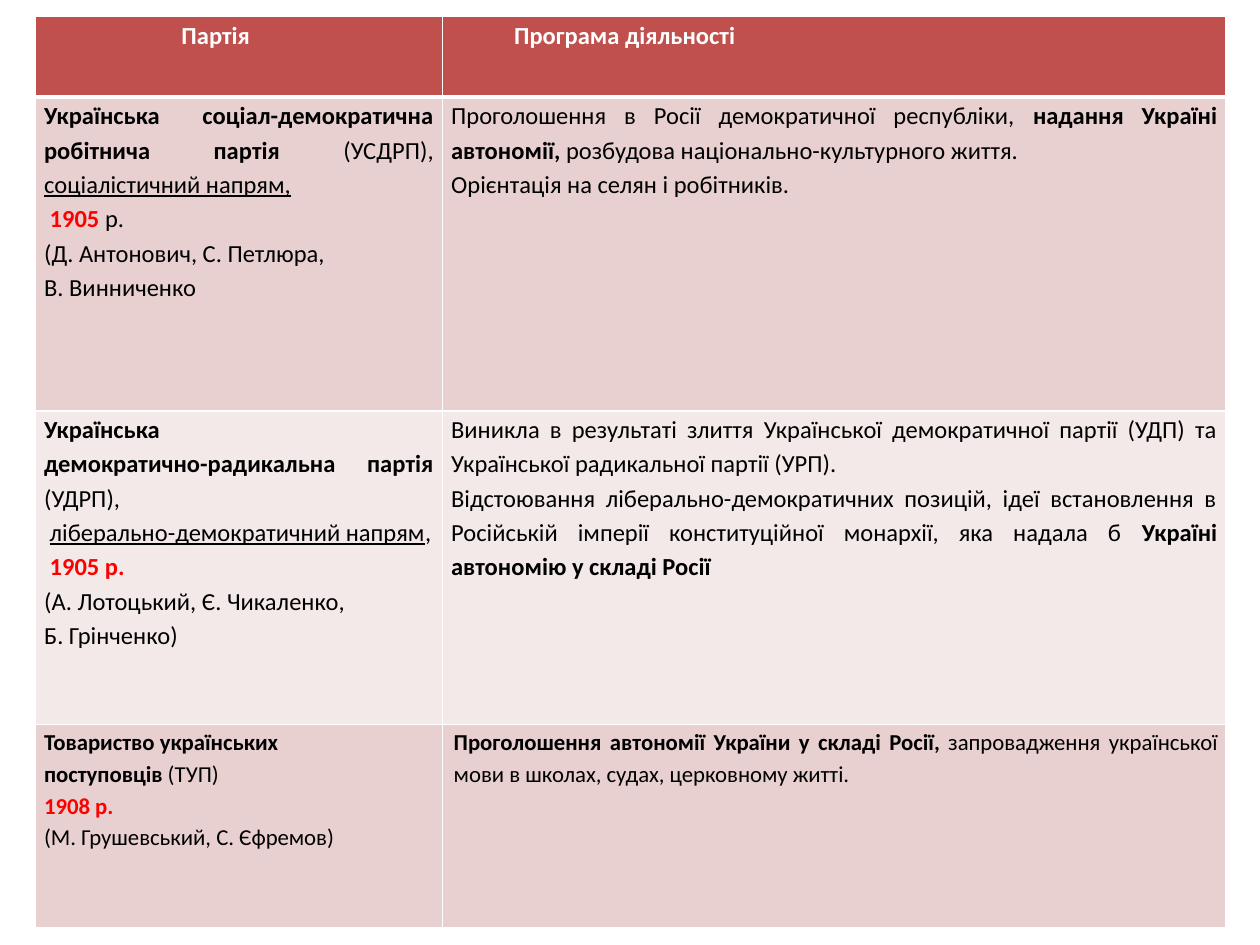
from lxml import etree
from pptx import Presentation
from pptx.dml.color import RGBColor
from pptx.enum.text import PP_ALIGN
from pptx.oxml.ns import qn
from pptx.util import Pt

JUSTIFY = PP_ALIGN.JUSTIFY
FONT = "Calibri"
COLORS = {"head": "C0504D", "dark": "E8D0D0", "light": "F4E9E9",
          "white": "FFFFFF", "text": "000000", "date": "FF0000"}

# Content: row > cell > paragraph > run (text, marks)
# Marks: b = bold, u = underlined, d = date colour
ROWS = [
    [
        [[("Партія ", "b")]],
        [[("Програма діяльності", "b")]],
    ],
    [
        [
            [("Українська соціал-демократична робітнича партія ", "b"),
             ("(УСДРП), ", ""), ("соціалістичний напрям,", "u")],
            [(" ", ""), ("1905 ", "bd"), ("р.", "")],
            [("(Д. Антонович, С. Петлюра, ", "")],
            [("В. Винниченко", "")],
        ],
        [
            [("Проголошення в Росії демократичної республіки, ", ""),
             ("надання Україні автономії,", "b"),
             (" розбудова національно-культурного життя.", "")],
            [("Орієнтація на селян і робітників.", "")],
        ],
    ],
    [
        [
            [("Українська", "b")],
            [("демократично-радикальна партія ", "b"), ("(УДРП),", "")],
            [(" ", ""), ("ліберально-демократичний напрям", "u"), (",", "")],
            [(" ", ""), ("1905 р.", "bd")],
            [("(А. Лотоцький, Є. Чикаленко,", "")],
            [("Б. Грінченко)", "")],
        ],
        [
            [("Виникла в результаті злиття Української демократичної партії "
              "(УДП) та Української радикальної партії (УРП).", "")],
            [("Відстоювання ліберально-демократичних позицій, ідеї "
              "встановлення в Російській імперії конституційної монархії, "
              "яка надала б ", ""),
             ("Україні автономію у складі Росії", "b")],
        ],
    ],
    [
        [
            [("Товариство українських", "b")],
            [("поступовців ", "b"), ("(ТУП) ", "")],
            [("1908 р.", "bd")],
            [("(М. Грушевський, С. Єфремов)", "")],
        ],
        [
            [("Проголошення автономії України у складі Росії, ", "b"),
             ("запровадження української мови в школах, судах, "
              "церковному житті. ", "")],
        ],
    ],
]

# Layout: row height, fill, text colour, text size
STYLES = [(46.1, "head", "white", 14), (179.3, "dark", "text", 14),
          (179.3, "light", "text", 14), (115.9, "dark", "text", 13)]
WIDTHS = [232.6, 447.8]
LEFT, TOP = 20.2, 9.4
INSET = 5
# (row, column): left margin, first-line indent
INDENTS = {(0, 0): (36, 42.5), (0, 1): (36, 0), (3, 1): (1.5, 0)}


def add_border(cell, side, width):
    line = etree.SubElement(cell._tc.get_or_add_tcPr(), qn("a:ln" + side),
                            w=str(Pt(width)))
    fill = etree.SubElement(line, qn("a:solidFill"))
    etree.SubElement(fill, qn("a:srgbClr"), val=COLORS["white"])


def add_text(cell, paras, ink, size, indent):
    frame = cell.text_frame
    for i, runs in enumerate(paras):
        para = frame.add_paragraph() if i else frame.paragraphs[0]
        para.alignment = JUSTIFY
        para.line_spacing = 1.15
        props = para._p.get_or_add_pPr()
        for key, value in zip(("marL", "indent"), indent):
            props.set(key, str(Pt(value)))
        for text, marks in runs:
            run = para.add_run()
            run.text = text
            font = run.font
            font.name, font.size = FONT, Pt(size)
            font.bold, font.underline = "b" in marks, "u" in marks
            name = "date" if "d" in marks else ink
            font.color.rgb = RGBColor.from_string(COLORS[name])


def main():
    deck = Presentation()
    deck.slide_width, deck.slide_height = Pt(720), Pt(540)
    slide = deck.slides.add_slide(deck.slide_layouts[6])

    # Table grid
    table = slide.shapes.add_table(
        len(ROWS), len(WIDTHS), Pt(LEFT), Pt(TOP), Pt(sum(WIDTHS)),
        Pt(sum(style[0] for style in STYLES))).table
    for col, width in zip(table.columns, WIDTHS):
        col.width = Pt(width)

    # Cells
    for r, (row, style) in enumerate(zip(ROWS, STYLES)):
        height, fill, ink, size = style
        table.rows[r].height = Pt(height)
        for c, paras in enumerate(row):
            cell = table.cell(r, c)
            cell.margin_left = cell.margin_right = Pt(INSET)
            cell.margin_top = cell.margin_bottom = 0
            # A thick rule parts the header from the body
            for side in "LRTB":
                thick = (r, side) in ((0, "B"), (1, "T"))
                add_border(cell, side, 3 if thick else 1)
            cell.fill.solid()
            cell.fill.fore_color.rgb = RGBColor.from_string(COLORS[fill])
            add_text(cell, paras, ink, size, INDENTS.get((r, c), (0, 0)))

    deck.save("out.pptx")


if __name__ == "__main__":
    main()
